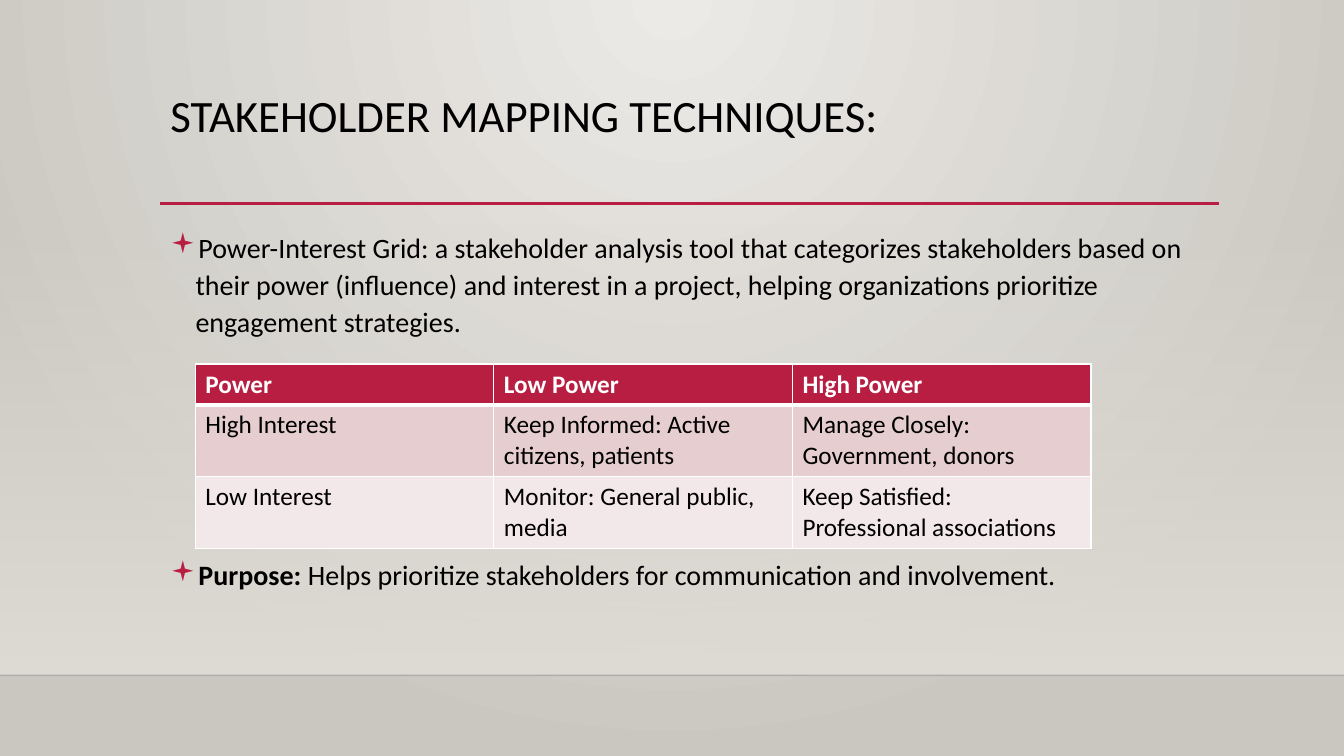
import pptx
import pptx.util
import pptx.dml.color
import pptx.enum.shapes
import pptx.enum.text
import pptx.oxml.ns
import pptx.oxml.xmlchemy

Pt = pptx.util.Pt
qn = pptx.oxml.ns.qn
FONT = "Calibri"
COLORS = {
    "glow": "ECEAE7",
    "edge": "CAC7C1",
    "wall": "DFDBD5",
    "floor": "000001",
    "accent": "B71E42",
    "text": "000000",
    "white": "FFFFFF",
    "high": "E6CDCF",
    "low": "F3E8E9",
}
GRID = [
    ("accent", 29.2, ["Power", "Low Power", "High Power"]),
    ("high", 50.55, ["High Interest", "Keep Informed: Active citizens, patients",
                     "Manage Closely: Government, donors"]),
    ("low", 50.55, ["Low Interest", "Monitor: General public, media",
                    "Keep Satisfied: Professional associations"]),
]


def rgb(name):
    return pptx.dml.color.RGBColor.from_string(COLORS[name])


def add_xml(parent, tag, **attributes):
    child = pptx.oxml.xmlchemy.OxmlElement(tag)
    for key, value in attributes.items():
        child.set(key, str(value))
    parent.append(child)
    return child


def set_alpha(element, percent):
    add_xml(next(element.iter(qn("a:srgbClr"))), "a:alpha", val=percent * 1000)


def set_gradient(fill, start, end):
    fill.gradient()
    for stop, name in zip(fill.gradient_stops, (start, end)):
        stop.color.rgb = rgb(name)


def paint_background(slide):
    set_gradient(slide.background.fill, "glow", "edge")
    gradient = next(slide.element.iter(qn("a:gradFill")))
    gradient.remove(gradient.find(qn("a:lin")))
    circle = add_xml(gradient, "a:path", path="circle")
    add_xml(circle, "a:fillToRect", l=43000, t=0, r=43000, b=100000)


def add_wall(slide):
    wall = slide.shapes.add_shape(
        pptx.enum.shapes.MSO_SHAPE.RECTANGLE, 0, Pt(159), Pt(960), Pt(323.4))
    wall.shadow.inherit = False
    wall.line.fill.background()
    set_gradient(wall.fill, "wall", "wall")
    wall.fill.gradient_angle = 270
    set_alpha(wall.element, 0)
    slide.shapes.element.insert(2, wall.element)


def add_rule(slide, left, right, y, color, width):
    rule = slide.shapes.add_connector(
        pptx.enum.shapes.MSO_CONNECTOR.STRAIGHT, Pt(left), Pt(y), Pt(right), Pt(y))
    rule.line.color.rgb = rgb(color)
    rule.line.width = Pt(width)
    add_xml(rule.element.spPr, "a:effectLst")
    return rule


def style(paragraph, size, color="text"):
    paragraph.font.name = FONT
    paragraph.font.size = Pt(size)
    paragraph.font.color.rgb = rgb(color)


def place(placeholder, top, height):
    placeholder.left, placeholder.top = Pt(114.5), Pt(top)
    placeholder.width, placeholder.height = Pt(756), Pt(height)
    frame = placeholder.text_frame
    frame.word_wrap = True
    frame.auto_size = pptx.enum.text.MSO_AUTO_SIZE.NONE
    frame.vertical_anchor = pptx.enum.text.MSO_ANCHOR.TOP
    return frame


def fill_title(slide):
    frame = place(slide.shapes.title, 63.4, 82.6)
    frame.text = "STAKEHOLDER MAPPING TECHNIQUES:"
    heading = frame.paragraphs[0]
    heading.alignment = pptx.enum.text.PP_ALIGN.LEFT
    heading.line_spacing = 0.9
    style(heading, 32)


def format_bullet(paragraph, space_before):
    paragraph.line_spacing = 1.1
    paragraph.space_before = Pt(space_before)
    properties = paragraph._p.get_or_add_pPr()
    properties.set("marL", str(Pt(18)))
    properties.set("indent", str(-Pt(18)))
    bullet_color = add_xml(properties, "a:buClr")
    add_xml(bullet_color, "a:srgbClr", val=COLORS["accent"])
    add_xml(properties, "a:buFont", typeface="Wingdings")
    add_xml(properties, "a:buChar", char="▪")
    style(paragraph, 20)


def fill_body(slide):
    frame = place(slide.placeholders[1], 158.4, 271.4)
    definition = frame.paragraphs[0]
    definition.text = (
        "Power-Interest Grid: a stakeholder analysis tool that categorizes "
        "stakeholders based on their power (influence) and interest in a project, "
        "helping organizations prioritize engagement strategies.")
    format_bullet(definition, 0)
    purpose = frame.add_paragraph()
    label = purpose.add_run()
    label.text = "Purpose:"
    label.font.bold = True
    purpose.add_run().text = " Helps prioritize stakeholders for communication and involvement."
    format_bullet(purpose, 155)


def set_borders(cell, bottom, top):
    properties = cell._tc.get_or_add_tcPr()
    for side, width in (("L", 1), ("R", 1), ("T", top), ("B", bottom)):
        border = add_xml(properties, f"a:ln{side}", w=Pt(width))
        solid = add_xml(border, "a:solidFill")
        add_xml(solid, "a:srgbClr", val=COLORS["white"])


def add_grid(slide):
    grid = slide.shapes.add_table(
        len(GRID), 3, Pt(139.5), Pt(260), Pt(640), Pt(130.3)).table
    for column in grid.columns:
        column.width = Pt(213.3)
    for row, (color, height, texts) in enumerate(GRID):
        grid.rows[row].height = Pt(height)
        header = row == 0
        for column, text in enumerate(texts):
            cell = grid.cell(row, column)
            set_borders(cell, 3 if header else 1, 3 if row == 1 else 1)
            cell.fill.solid()
            cell.fill.fore_color.rgb = rgb(color)
            cell.text = text
            paragraph = cell.text_frame.paragraphs[0]
            style(paragraph, 18, "white" if header else "text")
            paragraph.font.bold = header


def main():
    deck = pptx.Presentation()
    deck.slide_width, deck.slide_height = Pt(960), Pt(540)
    slide = deck.slides.add_slide(deck.slide_layouts[1])
    paint_background(slide)
    add_wall(slide)
    floor = add_rule(slide, 0, 960, 482.4, "floor", 1)
    set_alpha(floor.element, 20)
    add_rule(slide, 114.5, 871, 145.4, "accent", 2.5)
    fill_title(slide)
    fill_body(slide)
    add_grid(slide)
    deck.save("out.pptx")


if __name__ == "__main__":
    main()
